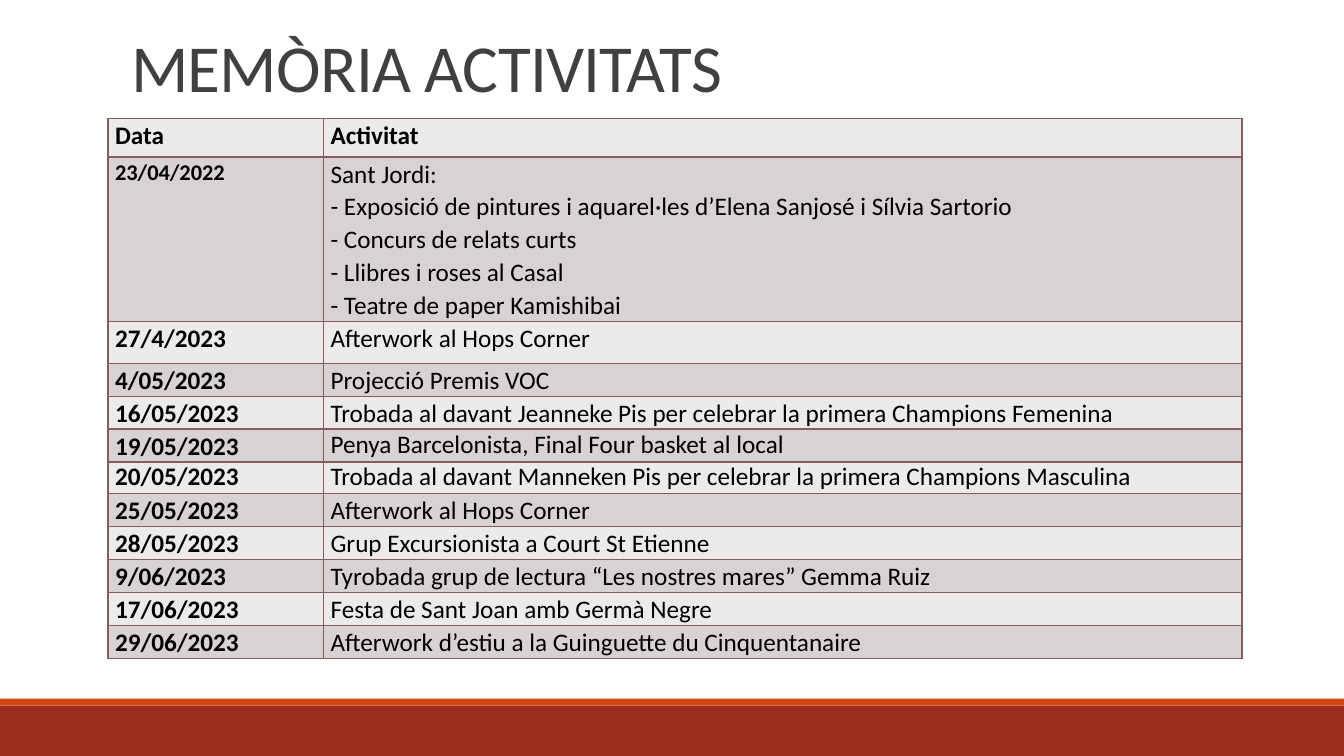
import pptx
import pptx.dml.color
import pptx.enum.shapes
import pptx.enum.text
import pptx.oxml
import pptx.oxml.ns
import pptx.util
from pptx.util import Pt

FONT = "Calibri"
BORDER = "855D5D"
BAND_FILLS = ("EDEAEA", "D9D2D2")
LINE_SPACING = 1.07

HEADER = ("Data", ["Activitat"])
ACTIVITIES = [
    ("23/04/2022", [
        "Sant Jordi:",
        "- Exposició de pintures i aquarel·les d’Elena Sanjosé i Sílvia Sartorio\n"
        "- Concurs de relats curts",
        "- Llibres i roses al Casal",
        "- Teatre de paper Kamishibai",
    ]),
    ("27/4/2023", ["Afterwork al Hops Corner"]),
    ("4/05/2023", ["Projecció Premis VOC"]),
    ("16/05/2023", ["Trobada al davant Jeanneke Pis per celebrar la primera Champions Femenina"]),
    ("19/05/2023", ["Penya Barcelonista, Final Four basket al local"]),
    ("20/05/2023", ["Trobada al davant Manneken Pis per celebrar la primera Champions Masculina"]),
    ("25/05/2023", ["Afterwork al Hops Corner"]),
    ("28/05/2023", ["Grup Excursionista a Court St Etienne"]),
    ("9/06/2023", ["Tyrobada grup de lectura “Les nostres mares” Gemma Ruiz"]),
    ("17/06/2023", ["Festa de Sant Joan amb Germà Negre"]),
    ("29/06/2023", ["Afterwork d’estiu a la Guinguette du Cinquentanaire"]),
]
COLUMN_WIDTHS = (154, 656)
ROW_HEIGHT = 23.5
SPECIAL_HEIGHTS = {"Data": 27.4, "23/04/2022": 117.5, "27/4/2023": 29.8, "20/05/2023": 22.5}
SMALL_DATES = {"23/04/2022"}
SINGLE_SPACED = {("19/05/2023", 1), ("20/05/2023", 0), ("20/05/2023", 1)}


def color(value):
    return pptx.dml.color.RGBColor.from_string(value)


def add_run(paragraph, text, size, text_color, bold=False):
    run = paragraph.add_run()
    run.text = text
    run.font.name = FONT
    run.font.size = Pt(size)
    run.font.bold = bold
    run.font.color.rgb = color(text_color)
    return run


def add_band(slide, top, height, fill):
    band = slide.shapes.add_shape(
        pptx.enum.shapes.MSO_SHAPE.RECTANGLE, Pt(0), Pt(top), Pt(960), Pt(height))
    band.shadow.inherit = False
    band.fill.solid()
    band.fill.fore_color.rgb = color(fill)
    band.line.fill.background()


def set_title(slide, text):
    title = slide.shapes.title
    title.left, title.top, title.width, title.height = Pt(86.4), Pt(18.7), Pt(792), Pt(60.5)
    frame = title.text_frame
    frame.word_wrap = True
    frame.auto_size = pptx.enum.text.MSO_AUTO_SIZE.NONE
    frame.vertical_anchor = pptx.enum.text.MSO_ANCHOR.BOTTOM
    paragraph = frame.paragraphs[0]
    paragraph.alignment = pptx.enum.text.PP_ALIGN.LEFT
    paragraph.line_spacing = 0.85
    run = add_run(paragraph, text, 48, "404040")
    run.font._element.set("spc", "-50")


def set_borders(cell):
    properties = cell._tc.get_or_add_tcPr()
    for position, side in enumerate(("lnL", "lnR", "lnT", "lnB")):
        properties.insert(position, pptx.oxml.parse_xml(
            f'<a:{side} {pptx.oxml.ns.nsdecls("a")} w="12700">'
            f'<a:solidFill><a:srgbClr val="{BORDER}"/></a:solidFill></a:{side}>'))


def fill_cell(cell, texts, fill, size, bold, line_spacing):
    cell.margin_left = cell.margin_right = Pt(5)
    cell.margin_top = cell.margin_bottom = Pt(0)
    cell.fill.solid()
    cell.fill.fore_color.rgb = color(fill)
    set_borders(cell)
    frame = cell.text_frame
    for index, text in enumerate(texts):
        paragraph = frame.add_paragraph() if index else frame.paragraphs[0]
        paragraph.line_spacing = line_spacing
        for line_number, line in enumerate(text.split("\n")):
            if line_number:
                paragraph.add_line_break()
            add_run(paragraph, line, size, "000000", bold)


def add_activity_table(slide):
    rows = [HEADER] + ACTIVITIES
    heights = [SPECIAL_HEIGHTS.get(date, ROW_HEIGHT) for date, _ in rows]
    table = slide.shapes.add_table(
        len(rows), len(COLUMN_WIDTHS), Pt(77.2), Pt(84.7),
        Pt(sum(COLUMN_WIDTHS)), Pt(sum(heights))).table
    for column, width in zip(table.columns, COLUMN_WIDTHS):
        column.width = Pt(width)
    for index, (date, activity) in enumerate(rows):
        table.rows[index].height = Pt(heights[index])
        for column, texts in enumerate(([date], activity)):
            fill_cell(
                table.cell(index, column), texts, BAND_FILLS[index % 2],
                size=16 if column == 0 and date in SMALL_DATES else 18,
                bold=column == 0 or index == 0,
                line_spacing=1.0 if (date, column) in SINGLE_SPACED else LINE_SPACING)


def main():
    presentation = pptx.Presentation()
    presentation.slide_width, presentation.slide_height = Pt(960), Pt(540)
    slide = presentation.slides.add_slide(presentation.slide_layouts[5])
    add_band(slide, 504, 36, "9B2D1F")
    add_band(slide, 499, 5, "D34817")
    set_title(slide, "MEMÒRIA ACTIVITATS")
    add_activity_table(slide)
    presentation.save("out.pptx")


if __name__ == "__main__":
    main()
